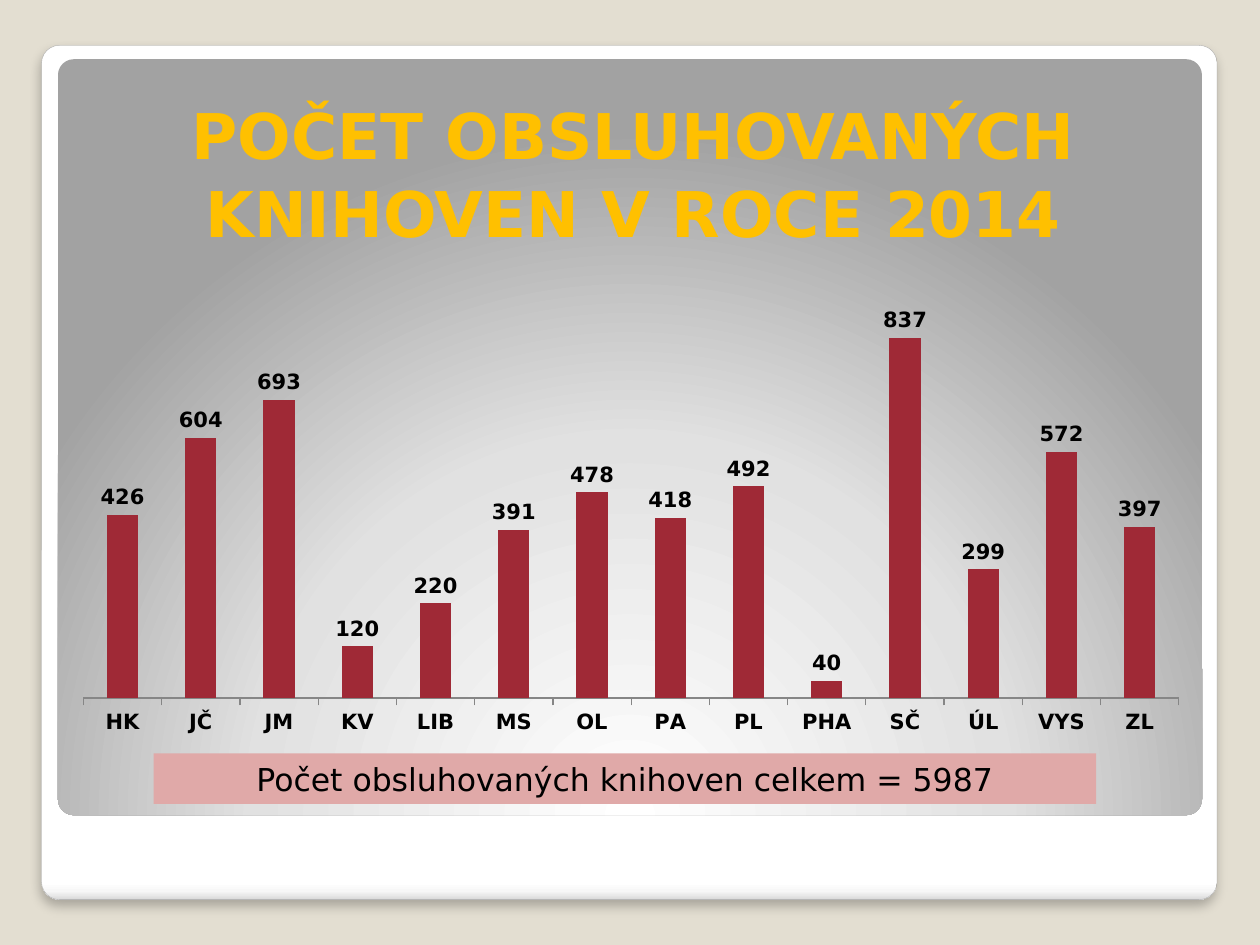
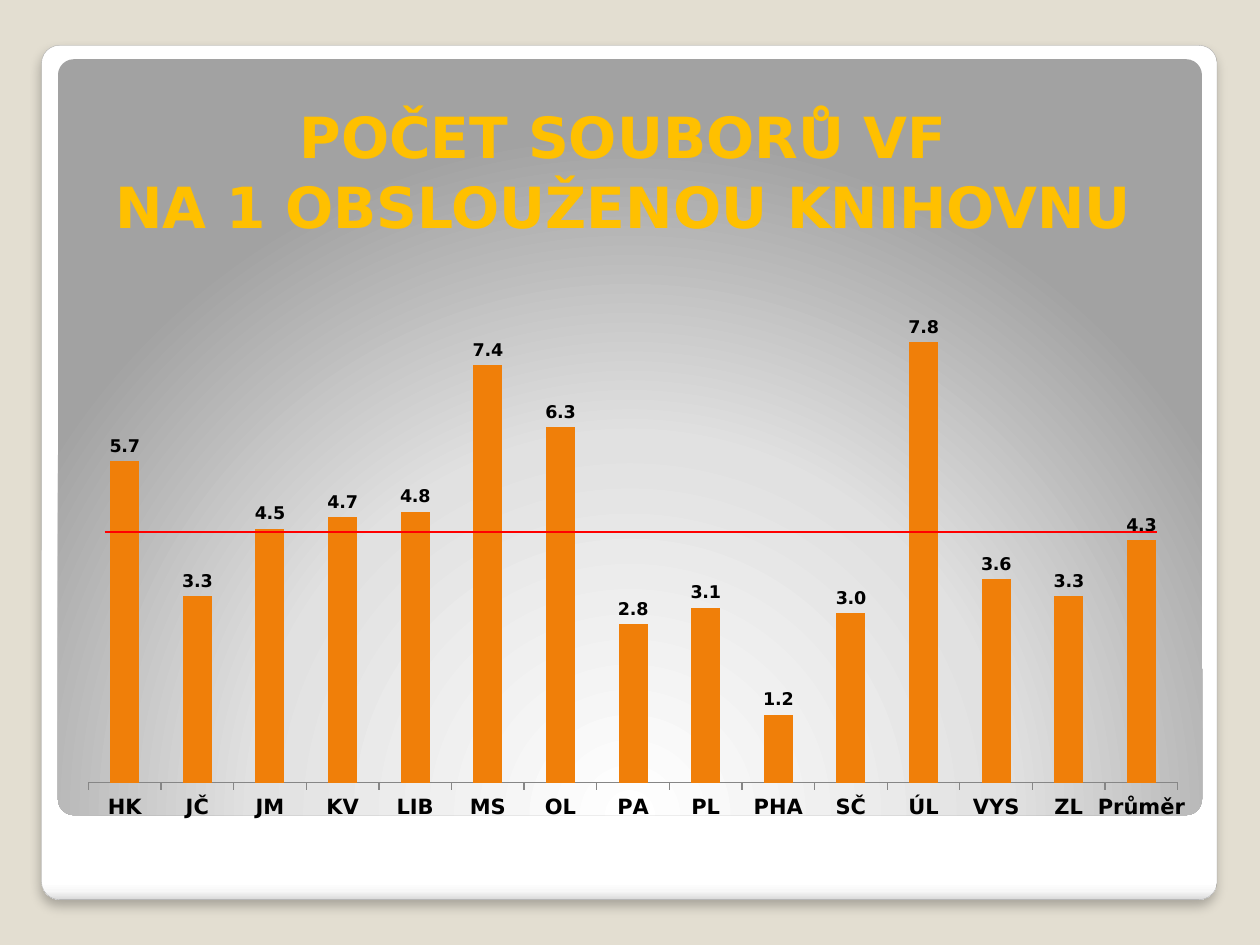
import pptx
import pptx.chart.data
import pptx.dml.color
import pptx.enum.chart
import pptx.enum.shapes
import pptx.enum.text
import pptx.oxml
import pptx.oxml.ns
import pptx.util

Pt = pptx.util.Pt
qn = pptx.oxml.ns.qn
FONT = "DejaVu Sans"
COLORS = {
    "page": "E3DED1", "edge": "A4A4A4", "title": "FFC000", "text": "000000",
    "libraries": "9F2936", "sets": "F07F09", "banner": "E0A9A8",
    "average": "FF0000", "axis": "868686",
}
REGIONS = ["HK", "JČ", "JM", "KV", "LIB", "MS", "OL", "PA", "PL", "PHA",
           "SČ", "ÚL", "VYS", "ZL"]


def rgb(name):
    return pptx.dml.color.RGBColor.from_string(COLORS[name])


def lengths(box):
    return [Pt(value) for value in box]


def drawing_xml(tag, content, attributes=""):
    return pptx.oxml.parse_xml(
        f'<a:{tag} {pptx.oxml.ns.nsdecls("a")} {attributes}>{content}</a:{tag}>')


def style_font(font, size, color="text", bold=False):
    font.name = FONT
    font.size = Pt(size)
    font.bold = bold
    font.color.rgb = rgb(color)


# Shared background: two rounded panels on the master
def add_panel(slide, box, stops, direction):
    panel = slide.shapes.add_shape(
        pptx.enum.shapes.MSO_SHAPE.ROUNDED_RECTANGLE, *lengths(box))
    panel.adjustments[0] = 0.021
    panel.shadow.inherit = False
    panel.line.fill.background()
    panel.fill.background()
    gradient_stops = "".join(
        f'<a:gs pos="{position * 1000}"><a:srgbClr val="{color}"/></a:gs>'
        for position, color in stops)
    properties = panel._element.spPr
    properties.replace(
        properties.find(qn("a:noFill")),
        drawing_xml("gradFill", f"<a:gsLst>{gradient_stops}</a:gsLst>{direction}",
                    'rotWithShape="1"'))
    return panel


def build_master(master, slide):
    master.background.fill.solid()
    master.background.fill.fore_color.rgb = rgb("page")
    frame = add_panel(
        slide, (23.76, 25.92, 671.76, 488.16),
        [(0, "FFFFFF"), (98, "FFFFFF"), (99, "F7F7F7"), (100, "DADADA")],
        '<a:lin ang="5400000" scaled="0"/>')
    frame.line.color.rgb = rgb("edge")
    frame.line.width = Pt(0.16)
    frame._element.spPr.find(qn("a:effectLst")).append(drawing_xml(
        "outerShdw",
        '<a:srgbClr val="000000"><a:alpha val="25000"/></a:srgbClr>',
        f'blurRad="{Pt(6)}" dist="{Pt(4)}" dir="5400000" algn="t" rotWithShape="0"'))
    stage = add_panel(
        slide, (33.12, 33.84, 653.76, 432),
        [(0, "FFFFFF"), (55, "E1E1E1"), (100, "A2A2A2")],
        '<a:path path="circle">'
        '<a:fillToRect l="50000" t="175000" r="50000" b="-75000"/></a:path>')
    for order, panel in enumerate((frame, stage)):
        panel._element.nvSpPr.cNvPr.set("id", str(101 + order))
        master.shapes._spTree.insert(2 + order, panel._element)


def set_title(slide, box, lines, size):
    title = slide.shapes.title
    title.left, title.top, title.width, title.height = lengths(box)
    frame = title.text_frame
    frame.word_wrap = True
    frame.auto_size = pptx.enum.text.MSO_AUTO_SIZE.NONE
    frame.vertical_anchor = pptx.enum.text.MSO_ANCHOR.BOTTOM
    frame.margin_bottom = Pt(2.4)
    paragraph = frame.paragraphs[0]
    paragraph.alignment = pptx.enum.text.PP_ALIGN.CENTER
    paragraph.line_spacing = 1.03
    for index, line in enumerate(lines):
        if index:
            paragraph.add_line_break()
        run = paragraph.add_run()
        run.text = line
        style_font(run.font, size, "title", True)


# Column chart with a hidden value axis and a fixed plot area
def add_columns(slide, box, plot, name, categories, values, top_value, color,
                label_size, number_format):
    data = pptx.chart.data.CategoryChartData(number_format=number_format)
    data.categories = categories
    data.add_series(name, values)
    chart = slide.shapes.add_chart(
        pptx.enum.chart.XL_CHART_TYPE.COLUMN_CLUSTERED, *lengths(box), data).chart
    chart.has_legend = False
    chart.has_title = False
    style_font(chart.font, 10)

    value_axis = chart.value_axis
    value_axis.minimum_scale = 0
    value_axis.maximum_scale = top_value
    value_axis.has_major_gridlines = False
    value_axis.visible = False
    region_axis = chart.category_axis
    region_axis.major_tick_mark = pptx.enum.chart.XL_TICK_MARK.OUTSIDE
    region_axis.format.line.color.rgb = rgb("axis")
    region_axis.format.line.width = Pt(0.75)
    style_font(region_axis.tick_labels.font, 12, bold=True)

    columns = chart.plots[0]
    columns.gap_width = 150
    columns.vary_by_categories = False
    fill = columns.series[0].format.fill
    fill.solid()
    fill.fore_color.rgb = rgb(color)
    columns.has_data_labels = True
    labels = columns.data_labels
    labels.show_value = True
    labels.number_format = number_format
    labels.number_format_is_linked = False
    labels.position = pptx.enum.chart.XL_LABEL_POSITION.OUTSIDE_END
    style_font(labels.font, label_size, bold=True)

    settings = '<c:layoutTarget val="inner"/>'
    settings += '<c:xMode val="edge"/><c:yMode val="edge"/>'
    settings += "".join(f'<c:{side} val="{share}"/>'
                        for side, share in zip("xywh", plot))
    plot_area = chart._chartSpace.chart.plotArea
    for automatic in plot_area.findall(qn("c:layout")):
        plot_area.remove(automatic)
    plot_area.insert(0, pptx.oxml.parse_xml(
        f'<c:layout {pptx.oxml.ns.nsdecls("c")}>'
        f'<c:manualLayout>{settings}</c:manualLayout></c:layout>'))


def add_total_banner(slide, box, text):
    banner = slide.shapes.add_shape(
        pptx.enum.shapes.MSO_SHAPE.RECTANGLE, *lengths(box))
    banner.shadow.inherit = False
    banner.fill.solid()
    banner.fill.fore_color.rgb = rgb("banner")
    banner.line.fill.background()
    banner.text_frame.word_wrap = True
    banner.text_frame.auto_size = pptx.enum.text.MSO_AUTO_SIZE.SHAPE_TO_FIT_TEXT
    paragraph = banner.text_frame.paragraphs[0]
    paragraph.alignment = pptx.enum.text.PP_ALIGN.CENTER
    run = paragraph.add_run()
    run.text = text
    style_font(run.font, 18)


def add_average_line(slide, left, right, height):
    average = slide.shapes.add_connector(
        pptx.enum.shapes.MSO_CONNECTOR.STRAIGHT,
        Pt(left), Pt(height), Pt(right), Pt(height))
    average.line.color.rgb = rgb("average")
    average.line.width = Pt(1)
    average._element.spPr.append(drawing_xml("effectLst", ""))


# Slide 1: libraries served
def build_libraries(slide):
    set_title(slide, (39.6, 43.2, 644.4, 102.24),
              ["POČET OBSLUHOVANÝCH KNIHOVEN V ROCE 2014"], 36)
    add_columns(slide, (36.72, 167.76, 648, 339.84), (0.017, 0.029, 0.966, 0.651),
                "Počet knihoven", REGIONS,
                [426, 604, 693, 120, 220, 391, 478, 418, 492, 40, 837, 299, 572, 397],
                900, "libraries", 12, "General")
    add_total_banner(slide, (87.84, 430.56, 538.56, 28.8),
                     "Počet obsluhovaných knihoven celkem = 5987")


# Slide 2: exchange sets per library
def build_sets(slide):
    set_title(slide, (39.6, 43.2, 644.4, 96.48),
              ["POČET SOUBORŮ VF ", "NA 1 OBSLOUŽENOU KNIHOVNU "], 32.4)
    add_columns(slide, (39.6, 156.96, 644.4, 345.6), (0.017, 0, 0.966, 0.84),
                "Počet souborů", REGIONS + ["Průměr"],
                [5.7, 3.3, 4.5, 4.7, 4.8, 7.4, 6.3, 2.8, 3.1, 1.2, 3, 7.8, 3.6, 3.3, 4.3],
                9, "sets", 10, "0.0")
    add_average_line(slide, 59.76, 660.96, 303.84)


def main():
    deck = pptx.Presentation()
    deck.slide_width, deck.slide_height = Pt(720), Pt(540)
    title_only = deck.slide_layouts[5]
    libraries, sets = (deck.slides.add_slide(title_only) for _ in range(2))
    build_master(deck.slide_master, libraries)
    build_libraries(libraries)
    build_sets(sets)
    deck.save("out.pptx")


if __name__ == "__main__":
    main()
